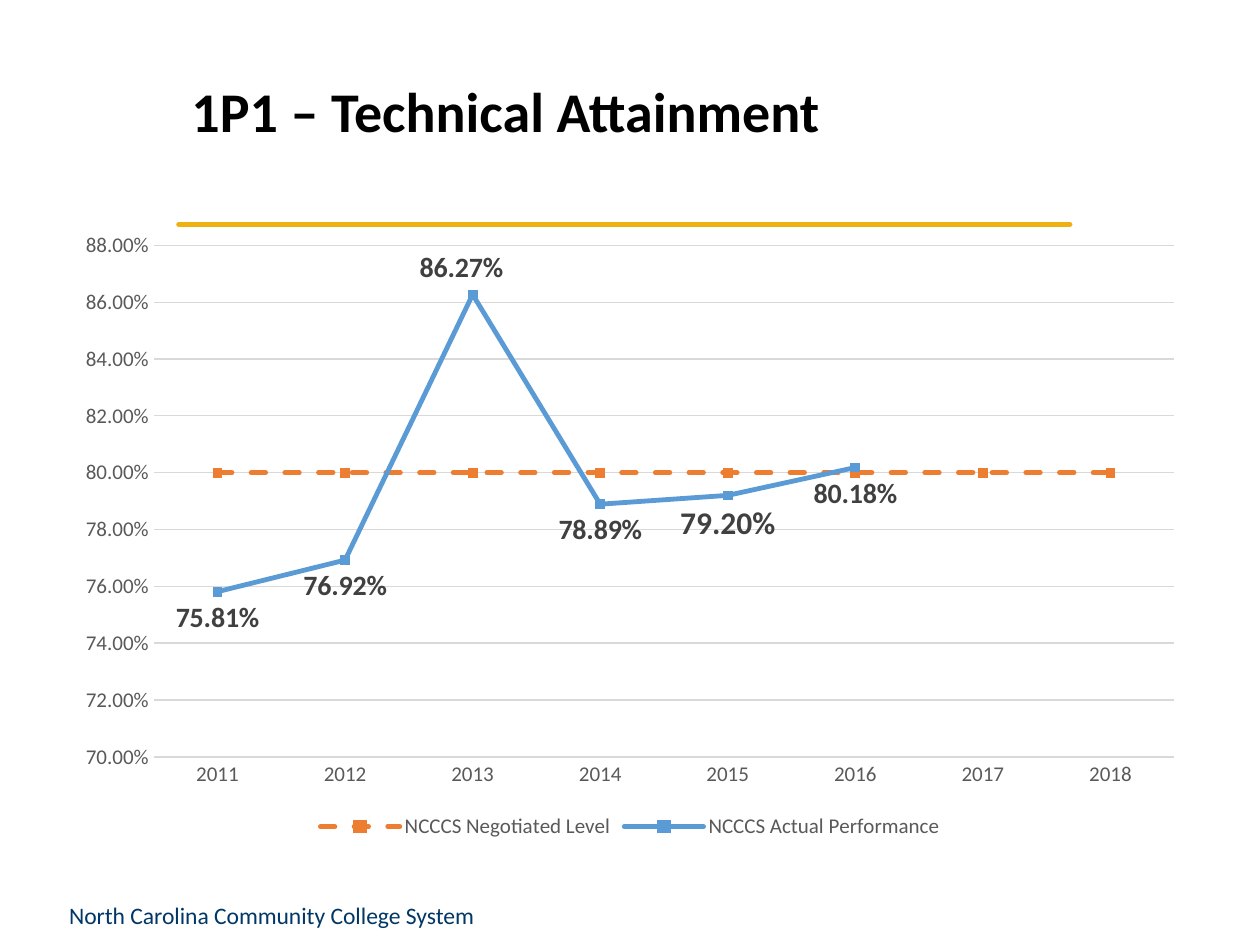
import dataclasses

import lxml.etree
import pptx
import pptx.chart.data
import pptx.dml.color
import pptx.enum.chart
import pptx.enum.dml
import pptx.enum.shapes
import pptx.enum.text
import pptx.oxml
import pptx.oxml.ns
import pptx.util

Pt = pptx.util.Pt
qn = pptx.oxml.ns.qn
charts = pptx.enum.chart


@dataclasses.dataclass(frozen=True)
class Theme:
    face: str = "Calibri"
    title: str = "000000"
    footer: str = "003767"
    rule: str = "EEB111"
    axis: str = "595959"
    grid: str = "D9D9D9"
    label: str = "404040"
    negotiated: str = "ED7D31"
    actual: str = "5B9BD5"
    title_size: float = 32
    footer_size: float = 13.5
    chart_size: float = 10
    axis_size: float = 12
    label_size: float = 16
    large_label_size: float = 18


def rgb(value):
    return pptx.dml.color.RGBColor.from_string(value)


def apply(target, values):
    for name, value in values.items():
        setattr(target, name, value)


def manual_layout(parent, index, **values):
    for old in parent.findall(qn("c:layout")):
        parent.remove(old)
    layout = lxml.etree.Element(qn("c:layout"))
    manual = lxml.etree.SubElement(layout, qn("c:manualLayout"))
    for name, value in values.items():
        lxml.etree.SubElement(manual, qn(f"c:{name}")).set("val", str(value))
    parent.insert(index, layout)


class SlideBuilder:
    def __init__(self, slide, theme):
        self.slide = slide
        self.theme = theme

    def style_font(self, font, size, color, bold=False):
        apply(font, {"name": self.theme.face, "size": Pt(size), "bold": bold})
        font.color.rgb = rgb(color)

    def style_line(self, line, color, width):
        line.color.rgb = rgb(color)
        line.width = Pt(width)

    def title(self, text, left, top, width, height):
        heading = self.slide.shapes.title
        apply(heading, {"left": Pt(left), "top": Pt(top), "width": Pt(width), "height": Pt(height)})
        frame = heading.text_frame
        apply(frame, {
            "text": text,
            "word_wrap": True,
            "auto_size": pptx.enum.text.MSO_AUTO_SIZE.NONE,
            "vertical_anchor": pptx.enum.text.MSO_ANCHOR.MIDDLE,
        })
        paragraph = frame.paragraphs[0]
        apply(paragraph, {"alignment": pptx.enum.text.PP_ALIGN.LEFT, "line_spacing": 0.9})
        self.style_font(paragraph.runs[0].font, self.theme.title_size, self.theme.title, True)

    def footer(self, text, left, top, width, height):
        frame = self.slide.shapes.add_textbox(Pt(left), Pt(top), Pt(width), Pt(height)).text_frame
        apply(frame, {"text": text, "word_wrap": True})
        self.style_font(frame.paragraphs[0].runs[0].font, self.theme.footer_size, self.theme.footer)

    def rule(self, left, right, y):
        rule = self.slide.shapes.add_connector(
            pptx.enum.shapes.MSO_CONNECTOR.STRAIGHT, Pt(left), Pt(y), Pt(right), Pt(y))
        self.style_line(rule.line, self.theme.rule, 3)
        properties = rule._element.spPr
        properties.find(qn("a:ln")).set("cap", "rnd")
        lxml.etree.SubElement(properties, qn("a:effectLst"))

    def line_chart(self, years, levels, left, top, width, height):
        data = pptx.chart.data.CategoryChartData(number_format="0.00%")
        data.categories = years
        for name, values in levels.items():
            data.add_series(name, values)
        chart = self.slide.shapes.add_chart(
            charts.XL_CHART_TYPE.LINE_MARKERS, Pt(left), Pt(top), Pt(width), Pt(height), data).chart
        self.style_font(chart.font, self.theme.chart_size, self.theme.title)
        apply(chart, {"has_title": False, "has_legend": True})
        apply(chart.legend, {"position": charts.XL_LEGEND_POSITION.BOTTOM, "include_in_layout": False})
        self.style_font(chart.legend.font, self.theme.axis_size, self.theme.axis)
        chart.plots[0].vary_by_categories = False
        manual_layout(chart.plots[0]._element.getparent(), 0, layoutTarget="inner",
                      xMode="edge", yMode="edge", x=0.08, y=0.04, w=0.9, h=0.82)
        self.axes(chart)
        return chart

    def axes(self, chart):
        for axis in (chart.category_axis, chart.value_axis):
            apply(axis, {"major_tick_mark": charts.XL_TICK_MARK.NONE,
                         "minor_tick_mark": charts.XL_TICK_MARK.NONE})
            self.style_font(axis.tick_labels.font, self.theme.axis_size, self.theme.axis)
        self.style_line(chart.category_axis.format.line, self.theme.grid, 1)
        scale = chart.value_axis
        apply(scale, {"minimum_scale": 0.7, "maximum_scale": 0.88, "major_unit": 0.02,
                      "has_major_gridlines": True})
        apply(scale.tick_labels, {"number_format": "0.00%", "number_format_is_linked": False})
        scale.format.line.fill.background()
        self.style_line(scale.major_gridlines.format.line, self.theme.grid, 0.75)

    def series(self, series, color, dash=None):
        series.smooth = False
        self.style_line(series.format.line, color, 2.75)
        series.format.line.dash_style = dash
        series._element.spPr.find(qn("a:ln")).set("cap", "rnd")
        apply(series.marker, {"style": charts.XL_MARKER_STYLE.SQUARE, "size": 5})
        series.marker.format.fill.solid()
        series.marker.format.fill.fore_color.rgb = rgb(color)
        self.style_line(series.marker.format.line, color, 0.75)

    def labels(self, series):
        below = charts.XL_LABEL_POSITION.BELOW
        labels = series.data_labels
        apply(labels, {"show_value": True, "position": below,
                       "number_format": "0.00%", "number_format_is_linked": False})
        self.style_font(labels.font, self.theme.label_size, self.theme.label, True)
        special = {2: (charts.XL_LABEL_POSITION.ABOVE, self.theme.label_size),
                   4: (below, self.theme.large_label_size)}
        for index, (position, size) in special.items():
            label = series.points[index].data_label
            self.style_font(label.font, size, self.theme.label, True)
            label.position = position
        peak = labels._element.find(qn("c:dLbl"))
        manual_layout(peak, 1, x=-0.01, y=0)


def main():
    theme = Theme()
    deck = pptx.Presentation()
    apply(deck, {"slide_width": Pt(720), "slide_height": Pt(540)})
    builder = SlideBuilder(deck.slides.add_slide(deck.slide_layouts[5]), theme)
    builder.rule(102.2, 611.3, 128.2)
    builder.footer("North Carolina Community College System", 32.4, 511.2, 255.6, 28.8)
    builder.title("1P1 – Technical Attainment", 102.2, 13, 579.6, 104.4)
    years = [str(year) for year in range(2011, 2019)]
    levels = {
        "NCCCS Negotiated Level": [0.8] * len(years),
        "NCCCS Actual Performance": (0.7581, 0.7692, 0.8627, 0.7889, 0.792, 0.8018, None, None),
    }
    attainment = builder.line_chart(years, levels, 36, 126, 648, 356.4)
    negotiated, actual = attainment.plots[0].series
    builder.series(negotiated, theme.negotiated, pptx.enum.dml.MSO_LINE.DASH)
    builder.series(actual, theme.actual)
    builder.labels(actual)
    deck.save("out.pptx")


if __name__ == "__main__":
    main()
